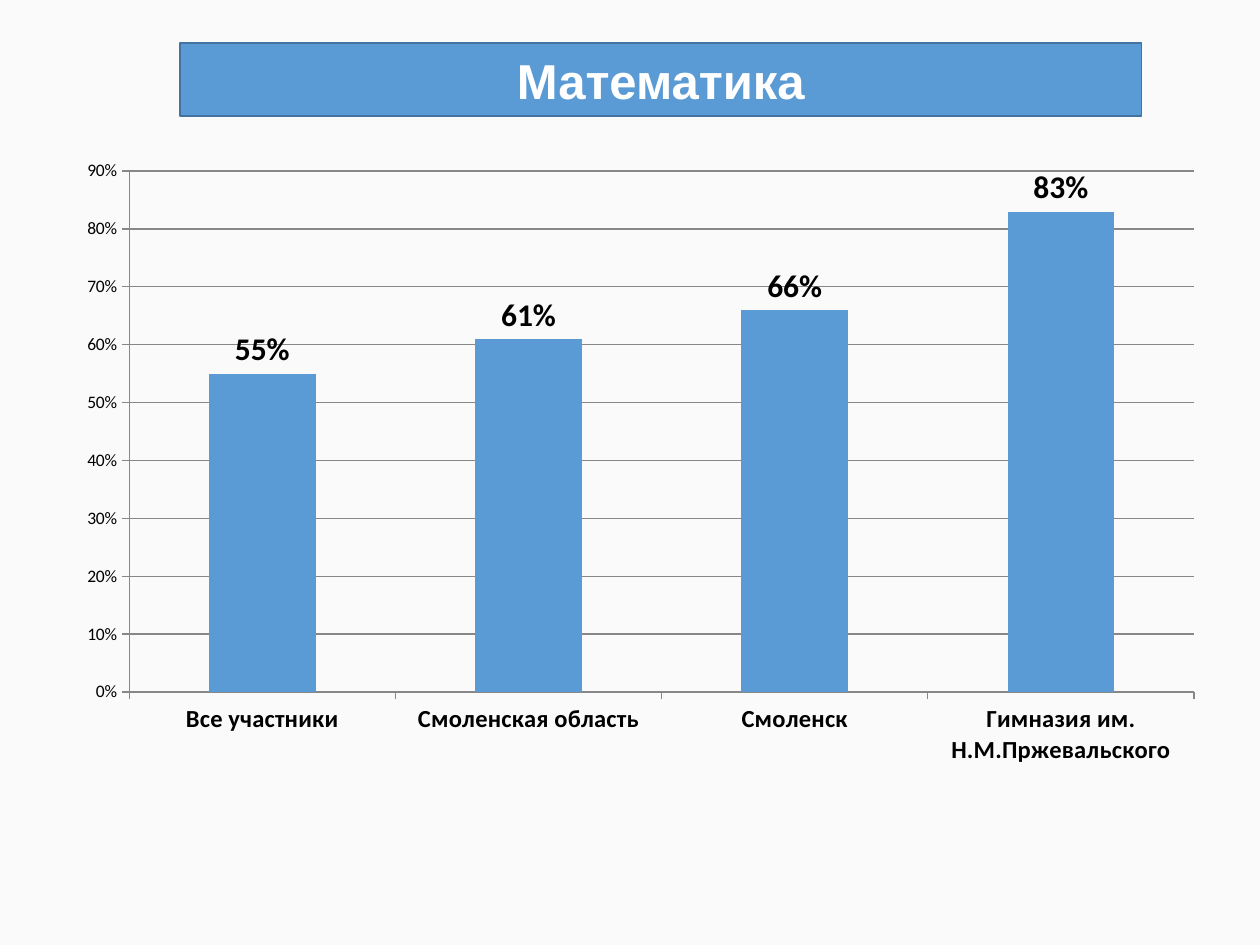
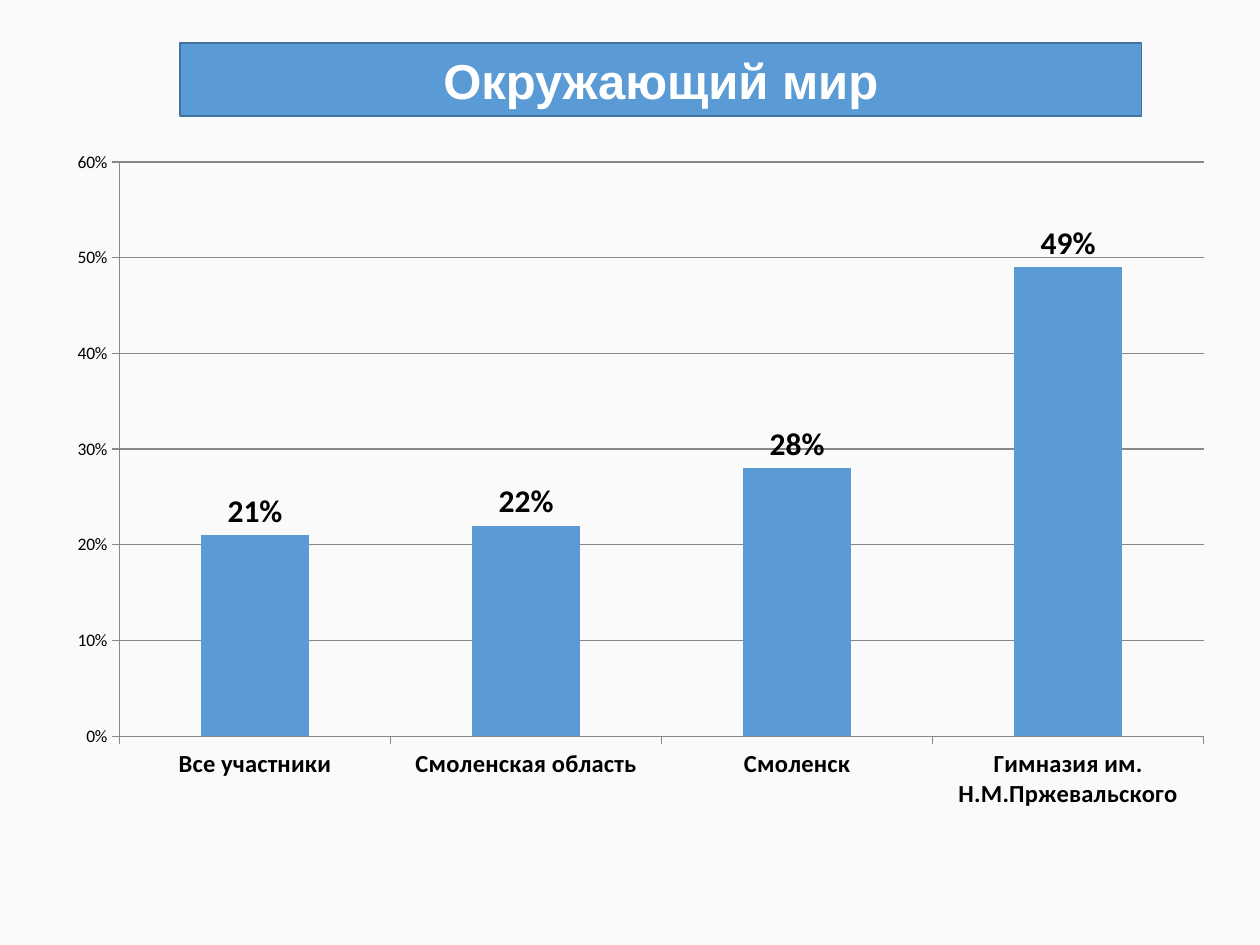
import dataclasses

import lxml.etree
import pptx
import pptx.chart.data
import pptx.dml.color
import pptx.enum.chart
import pptx.enum.shapes
import pptx.enum.text
import pptx.oxml
import pptx.oxml.ns
import pptx.util

Inches = pptx.util.Inches
Pt = pptx.util.Pt
qn = pptx.oxml.ns.qn


@dataclasses.dataclass(frozen=True)
class Theme:
    """Colours, fonts and type sizes shared by the slides."""
    background: str = "FAFAFA"
    accent: str = "5B9BD5"
    accent_edge: str = "43739E"
    grid: str = "878787"
    light: str = "FFFFFF"
    dark: str = "000000"
    title_font: str = "Arial"
    chart_font: str = "Calibri"
    title_size: int = 28
    label_size: int = 18
    category_size: int = 14
    scale_size: int = 10
    hairline: float = 0.75


THEME = Theme()
TITLE_BOX = (1.43, 0.34, 7.63, 0.58)
GROUPS = ("Все участники", "Смоленская область", "Смоленск",
          "Гимназия им. Н.М.Пржевальского")
SUBJECTS = (
    ("Математика", (0.51, 1.18, 9.15, 4.99), (0.55, 0.61, 0.66, 0.83), 0.9),
    ("Окружающий мир", (0.43, 1.1, 9.31, 5.43), (0.21, 0.22, 0.28, 0.49), 0.6),
)


def rgb(value):
    """Turn a hex string into a colour."""
    return pptx.dml.color.RGBColor.from_string(value)


def apply(target, formats):
    """Set each attribute named in formats on the target."""
    for name, value in formats.items():
        setattr(target, name, value)


def style_font(font, name, size, colour, bold=False):
    """Give a font its face, size, weight and colour."""
    apply(font, {"name": name, "size": Pt(size), "bold": bold})
    font.color.rgb = rgb(colour)


def style_line(line, colour, width):
    """Give a line its colour and width in points."""
    line.color.rgb = rgb(colour)
    line.width = Pt(width)


def fill_solid(fill, colour):
    """Fill with one colour."""
    fill.solid()
    fill.fore_color.rgb = rgb(colour)


def add_title(slide, box, text):
    """Draw the title band in its box."""
    band = slide.shapes.add_shape(
        pptx.enum.shapes.MSO_SHAPE.RECTANGLE, *map(Inches, box))
    band.shadow.inherit = False
    fill_solid(band.fill, THEME.accent)
    style_line(band.line, THEME.accent_edge, 1)
    apply(band.text_frame, {
        "word_wrap": True,
        "vertical_anchor": pptx.enum.text.MSO_ANCHOR.MIDDLE,
    })
    paragraph = band.text_frame.paragraphs[0]
    paragraph.alignment = pptx.enum.text.PP_ALIGN.CENTER
    run = paragraph.add_run()
    run.text = text
    style_font(run.font, THEME.title_font, THEME.title_size, THEME.light, True)


def fill_chart(chart, colour):
    """Put a borderless background behind the whole chart."""
    properties = lxml.etree.Element(qn("c:spPr"))
    solid = lxml.etree.SubElement(properties, qn("a:solidFill"))
    lxml.etree.SubElement(solid, qn("a:srgbClr")).set("val", colour)
    outline = lxml.etree.SubElement(properties, qn("a:ln"))
    lxml.etree.SubElement(outline, qn("a:noFill"))
    chart.element.find(qn("c:txPr")).addprevious(properties)


def style_axes(chart, maximum):
    """Style the category axis and the percentage scale."""
    axes = ((chart.category_axis, THEME.category_size, True),
            (chart.value_axis, THEME.scale_size, False))
    for axis, size, bold in axes:
        apply(axis, {
            "major_tick_mark": pptx.enum.chart.XL_TICK_MARK.OUTSIDE,
            "minor_tick_mark": pptx.enum.chart.XL_TICK_MARK.NONE,
            "has_major_gridlines": axis is chart.value_axis,
        })
        style_font(axis.tick_labels.font, THEME.chart_font, size, THEME.dark, bold)
        style_line(axis.format.line, THEME.grid, THEME.hairline)
    scale = chart.value_axis
    apply(scale, {"minimum_scale": 0, "maximum_scale": maximum, "major_unit": 0.1})
    apply(scale.tick_labels, {"number_format": "0%", "number_format_is_linked": False})
    style_line(scale.major_gridlines.format.line, THEME.grid, THEME.hairline)


def add_results_chart(slide, box, values, maximum):
    """Draw the column chart of results by group in its box."""
    data = pptx.chart.data.CategoryChartData(number_format="0%")
    data.categories = GROUPS
    data.add_series("Series 1", values)
    chart = slide.shapes.add_chart(
        pptx.enum.chart.XL_CHART_TYPE.COLUMN_CLUSTERED,
        *map(Inches, box), data).chart
    apply(chart, {"has_legend": False, "has_title": False})
    style_font(chart.font, THEME.chart_font, THEME.scale_size, THEME.dark)
    fill_chart(chart, THEME.background)
    style_axes(chart, maximum)
    plot = chart.plots[0]
    apply(plot, {"gap_width": 150, "vary_by_categories": False})
    series = plot.series[0]
    fill_solid(series.format.fill, THEME.accent)
    labels = series.data_labels
    apply(labels, {
        "show_value": True,
        "number_format": "0%",
        "number_format_is_linked": False,
        "position": pptx.enum.chart.XL_LABEL_POSITION.OUTSIDE_END,
    })
    style_font(labels.font, THEME.chart_font, THEME.label_size, THEME.dark, True)


def add_subject_slide(presentation, subject, chart_box, values, maximum):
    """Add one subject's slide with its title and chart."""
    slide = presentation.slides.add_slide(presentation.slide_layouts[6])
    fill_solid(slide.background.fill, THEME.background)
    add_title(slide, TITLE_BOX, subject)
    add_results_chart(slide, chart_box, values, maximum)


def main():
    """Build and save the presentation."""
    presentation = pptx.Presentation()
    apply(presentation, {"slide_width": Inches(10), "slide_height": Inches(7.5)})
    for subject in SUBJECTS:
        add_subject_slide(presentation, *subject)
    presentation.save("out.pptx")


if __name__ == "__main__":
    main()
